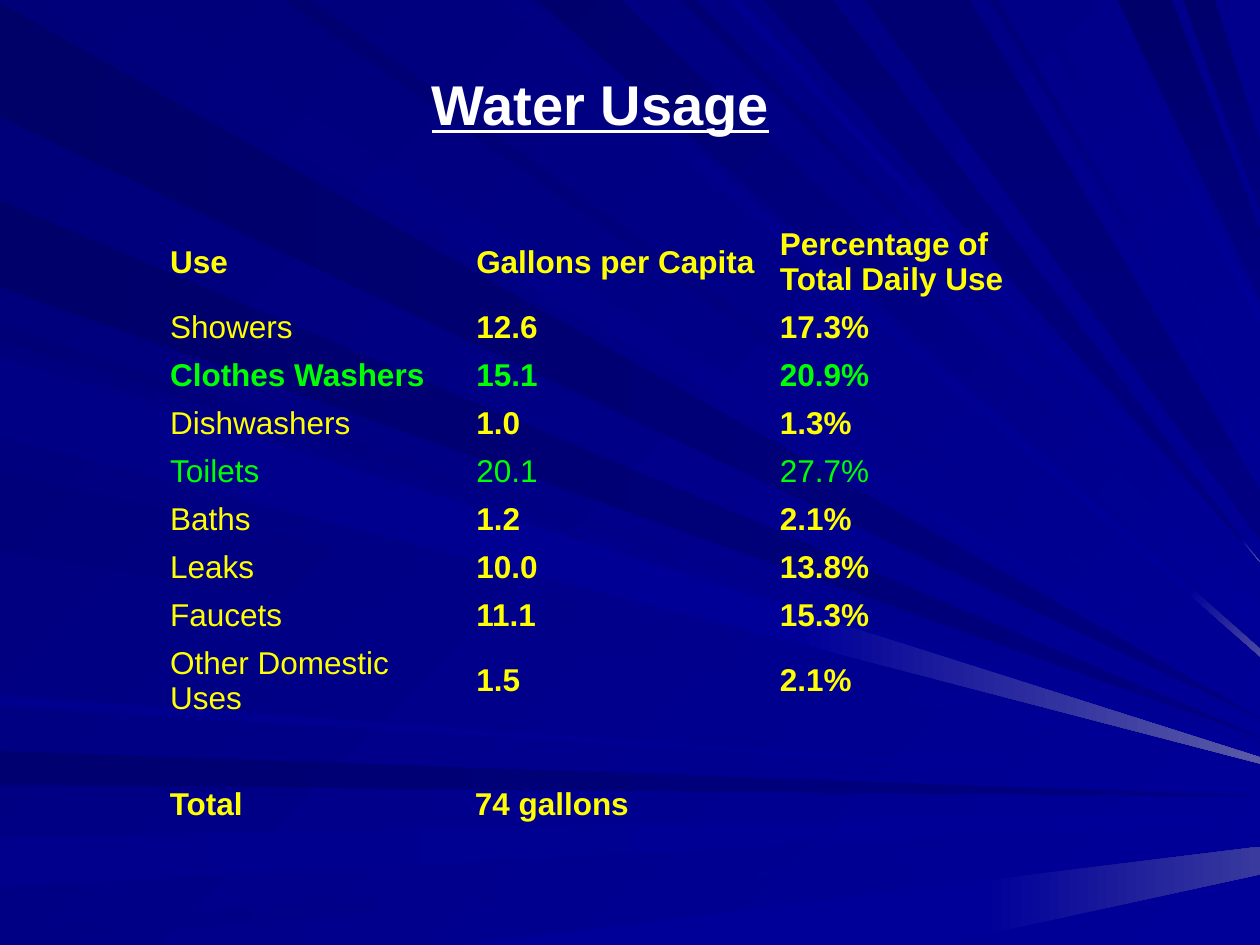
from pptx import Presentation
from pptx.dml.color import RGBColor
from pptx.enum.text import MSO_ANCHOR
from pptx.util import Inches, Pt

MIDDLE, TOP = MSO_ANCHOR.MIDDLE, MSO_ANCHOR.TOP
WIDE, HIGH = 10, 7.5
UNIT = Inches(0.01)
YELLOW, GREEN, WHITE = "FFFF00", "00FF00", "FFFFFF"
NAVY, BLUE = "000080", "000099"
NO_STYLE = "{2D5ABB26-0587-4C30-8999-92F81FD0307C}"

HEAD = ("Use", "Gallons per Capita", "Percentage of Total Daily Use")
USES = [
    ("Showers", "12.6", "17.3%"),
    ("Clothes Washers", "15.1", "20.9%"),
    ("Dishwashers", "1.0", "1.3%"),
    ("Toilets", "20.1", "27.7%"),
    ("Baths", "1.2", "2.1%"),
    ("Leaks", "10.0", "13.8%"),
    ("Faucets", "11.1", "15.3%"),
    ("Other Domestic Uses", "1.5", "2.1%"),
]
GREENS = {"Clothes Washers", "Toilets"}
BOLD_NAMES = {"Use", "Clothes Washers"}
PLAIN_ROWS = {"Toilets"}
COLS = (2.43, 2.41, 2.41)
LEFT, ROW = 1.25, 0.25

# text, box, wrap, anchor, size, colour, underline
NOTES = [
    ("Water Usage", (3.33, 0.5, 3.96, 0.63), True, TOP, 32, WHITE, True),
    ("74 gallons", (3.67, 6.17, 1.49, 0.4), False, MIDDLE, 18, YELLOW, False),
    ("Total", (LEFT, 6.17, 0.87, 0.4), False, MIDDLE, 18, YELLOW, False),
]

# By gradient angle: first colour, last colour, the two starts on the rim,
# then the heights (one or two) where the ray meets the right side.
# A rim place is x along the top; below zero it runs down the left side
# and on along the bottom.
RAYS = {
    45: [
        ("00007B", BLUE, 0.26, 1.01, 5.63),
        ("000076", BLUE, -2.58, -2.7, 5.89),
        ("000083", BLUE, 3.98, 4.16, 5.21, 5.15),
        ("00006D", BLUE, 4.26, 4.92, 5.07, 4.79),
        ("000073", BLUE, 5.4, 5.52, 4.63),
        ("00007E", BLUE, -2.78, -3.42, 5.96, 6.02),
        ("00007B", BLUE, -3.74, -4.37, 6.06),
        ("000070", BLUE, 2.25, 2.47, 5.52, 5.47),
        ("00008E", BLUE, 5.77, 5.88, 4.54),
        ("000078", BLUE, 7.85, 7.92, 3.6, 3.54),
        ("000085", BLUE, 8.15, 8.24, 3.36),
        ("00008A", BLUE, 8.65, 8.72, 2.58, 2.49),
    ],
    90: [
        ("000073", NAVY, 6.06, 6.61, 4.46),
        ("00006B", NAVY, 8.87, 9.3, 2.37, 1.83),
        ("00006D", NAVY, 9.39, 9.64, 1.67, 1.14),
        ("000073", NAVY, 6.86, 7.7, 4.28, 3.9),
    ],
    0: [
        ("000069", NAVY, -0.02, -0.93, 5.7),
        ("000071", NAVY, -5.96, -6.23, 6.32),
        ("00008C", BLUE, -6.65, -7.04, 6.43, 6.51),
        ("000085", BLUE, -7.35, -7.5, 6.62),
        (BLUE, BLUE, -11.14, -14.92, 6.72, 6.94),
        ("00006B", NAVY, -1.59, -2.28, 5.85),
        ("00008E", BLUE, -5.52, -5.6, 6.23),
        ("000085", BLUE, -2.83, -3.47, 6.01, 6.06),
    ],
}
# rim start of a ray: where its bright end begins, and that end's colour
GLOWS = {
    3.98: (9.45, "4A4AA1"),
    6.06: (9.86, "5A5AA6"),
    -11.14: (7.8, "39399E"),
    -2.83: (6.35, "5A5AA6"),
}


def tint(code):
    return RGBColor.from_string(code)


def paint(fill, start, end, angle):
    """Fill with one colour, or a gradient at a clockwise angle."""
    if start == end:
        fill.solid()
        fill.fore_color.rgb = tint(start)
        return
    fill.gradient()
    fill.gradient_angle = -angle % 360
    for stop, code in zip(fill.gradient_stops, (start, end)):
        stop.color.rgb = tint(code)


def write(frame, text, color, **look):
    frame.text = text
    font = frame.paragraphs[0].runs[0].font
    font.color.rgb = tint(color)
    for name, value in {"name": "Arial", "size": Pt(18), **look}.items():
        setattr(font, name, value)


def rim(place):
    if place >= 0:
        return place, 0
    return max(0, -place - HIGH), min(-place, HIGH)


def cross(start, end, x):
    """Point at x on the line from start to end."""
    share = (x - start[0]) / (end[0] - start[0])
    return x, start[1] + share * (end[1] - start[1])


def draw(slide, points, start, end, angle):
    dots = [(round(x * 100), round(y * 100)) for x, y in points]
    pen = slide.shapes.build_freeform(*dots[0], scale=UNIT)
    pen.add_line_segments(dots[1:], close=True)
    shape = pen.convert_to_shape()
    shape.shadow.inherit = False
    shape.line.fill.background()
    paint(shape.fill, start, end, angle)


def add_ray(slide, angle, start, end, first, last, *tips):
    a, b = rim(first), rim(last)
    c, d = (WIDE, tips[0]), (WIDE, tips[-1])
    if first in GLOWS:
        x, glow = GLOWS[first]
        e, f = cross(a, c, x), cross(b, d, x)
        draw(slide, (e, c, d, f), BLUE, glow, angle % 90)
        c, d = e, f
    draw(slide, (a, c, d, b), start, end, angle)


def add_uses(slide):
    rows = [HEAD, *USES]
    size = (LEFT, 1.75, sum(COLS), ROW * len(rows))
    table = slide.shapes.add_table(len(rows), len(COLS), *map(Inches, size)).table
    table.first_row = table.horz_banding = False
    table._tbl.tblPr[0].text = NO_STYLE
    for col, width in zip(table.columns, COLS):
        col.width = Inches(width)
    for r, row in enumerate(rows):
        use = row[0]
        for c, text in enumerate(row):
            cell = table.cell(r, c)
            cell.fill.background()
            cell.vertical_anchor = MIDDLE
            bold = use not in PLAIN_ROWS if c else use in BOLD_NAMES
            write(cell.text_frame, text, GREEN if use in GREENS else YELLOW, bold=bold)


def add_note(slide, text, box, wrap, anchor, size, color, under):
    frame = slide.shapes.add_textbox(*map(Inches, box)).text_frame
    frame.word_wrap = wrap
    frame.vertical_anchor = anchor
    write(frame, text, color, size=Pt(size), bold=True, underline=under)


def main():
    deck = Presentation()
    deck.slide_width, deck.slide_height = Inches(WIDE), Inches(HIGH)
    slide = deck.slides.add_slide(deck.slide_layouts[6])
    paint(slide.background.fill, "000078", BLUE, 45)
    for angle, rays in RAYS.items():
        for ray in rays:
            add_ray(slide, angle, *ray)
    add_uses(slide)
    for note in NOTES:
        add_note(slide, *note)
    deck.save("out.pptx")


if __name__ == "__main__":
    main()
